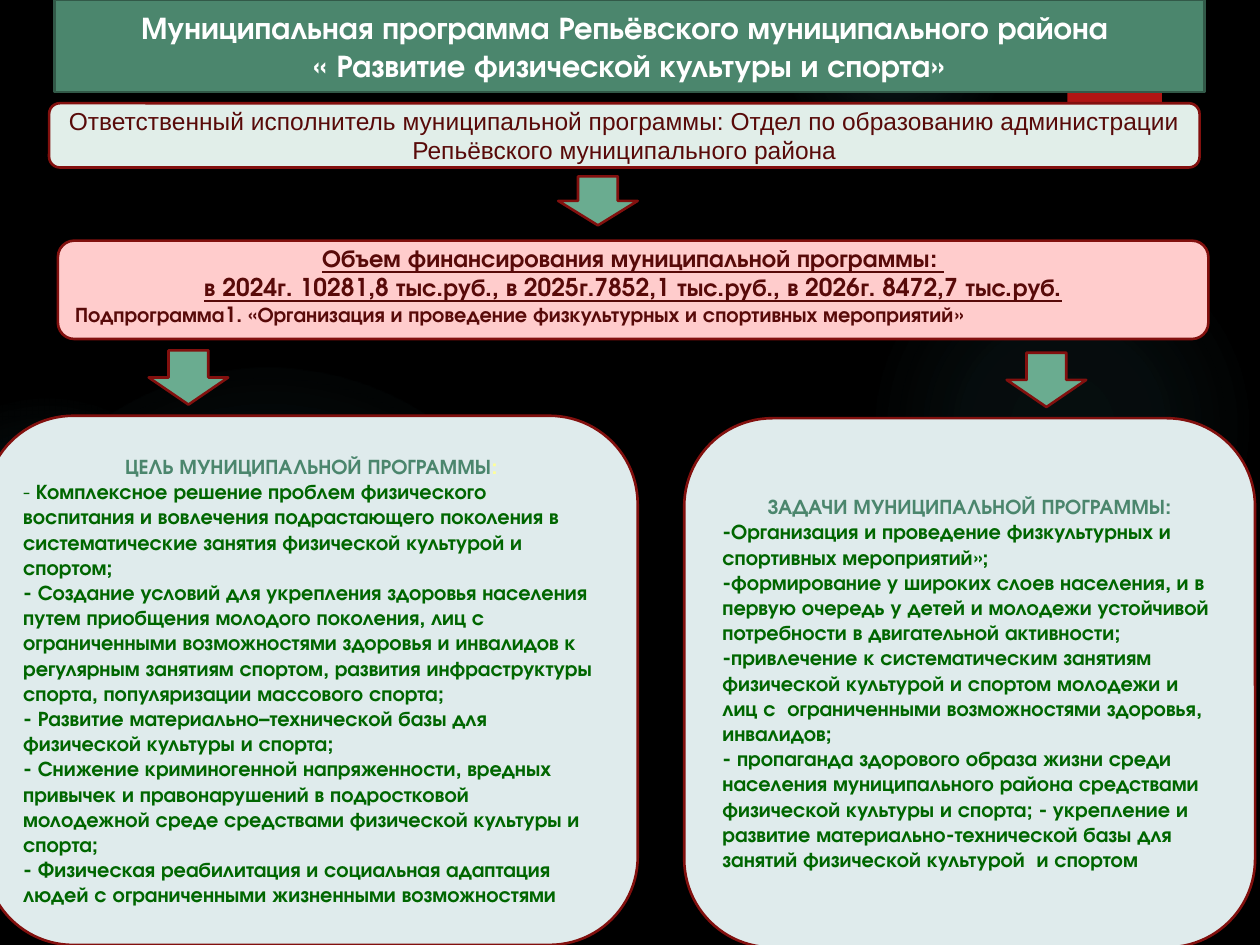
from lxml import etree
from pptx import Presentation
from pptx.dml.color import RGBColor
from pptx.enum.shapes import MSO_SHAPE
from pptx.enum.text import MSO_ANCHOR, MSO_AUTO_SIZE, PP_ALIGN
from pptx.oxml.ns import qn
from pptx.util import Pt

OVAL, RECT = MSO_SHAPE.OVAL, MSO_SHAPE.RECTANGLE
ROUND, ARROW = MSO_SHAPE.ROUNDED_RECTANGLE, MSO_SHAPE.DOWN_ARROW
MIDDLE, NO_FIT = MSO_ANCHOR.MIDDLE, MSO_AUTO_SIZE.NONE
LEFT, CENTER = PP_ALIGN.LEFT, PP_ALIGN.CENTER

BLACK = RGBColor(0x00, 0x00, 0x00)
WHITE = RGBColor(0xFF, 0xFF, 0xFF)
TEAL = "50B9C1"
RED = RGBColor(0xB0, 0x15, 0x13)
MAROON = RGBColor(0x82, 0x10, 0x0E)
WINE = RGBColor(0x58, 0x0A, 0x09)
GREEN = RGBColor(0x4B, 0x86, 0x6D)
PINE = RGBColor(0x32, 0x59, 0x48)
LEAF = RGBColor(0x00, 0x66, 0x00)
MINT = RGBColor(0x6A, 0xAC, 0x90)
PALE = RGBColor(0xE1, 0xEE, 0xE9)
PINK = RGBColor(0xFF, 0xCC, 0xCC)
MIST = RGBColor(0xDF, 0xEB, 0xEC)
CREAM = RGBColor(0xFF, 0xFF, 0x99)

SANS, GOTHIC = "Arial", "TeX Gyre Adventor"


def style(size, color, name=GOTHIC, bold=True, underline=False):
    return {"size": Pt(size), "color": color, "name": name,
            "bold": bold, "underline": underline}


HEAD = style(18, WHITE)
OWNER = style(14, WINE, SANS, False)
FUNDS = style(14, WINE, underline=True)
SUB = style(12, WINE)
CAP = style(12, GREEN)
COLON = style(12, CREAM)
ITEM = style(12, LEAF)
DASH = style(12, LEAF, bold=False)

# Each paragraph: alignment, then (text, style) runs
TITLE = [
    (CENTER, [("Муниципальная программа Репьёвского муниципального района ", HEAD)]),
    (CENTER, [("« Развитие физической культуры и спорта»", HEAD)]),
]
AGENCY = [
    (CENTER, [("Ответственный исполнитель муниципальной программы: Отдел по "
               "образованию администрации Репьёвского муниципального района", OWNER)]),
]
BUDGET = [
    (CENTER, [("Объем финансирования муниципальной программы: ", FUNDS)]),
    (CENTER, [("в 2024г. 10281,8 тыс.руб., в 2025г.7852,1 тыс.руб., "
               "в 2026г. 8472,7 тыс.руб.", FUNDS)]),
    (LEFT, [("Подпрограмма1. «Организация и проведение физкультурных "
             "и спортивных мероприятий»", SUB)]),
]
AIMS = [
    (CENTER, [("ЦЕЛЬ МУНИЦИПАЛЬНОЙ ПРОГРАММЫ", CAP), (":", COLON)]),
    (LEFT, [("- ", DASH),
            ("Комплексное решение проблем физического воспитания и вовлечения "
             "подрастающего поколения в систематические занятия физической "
             "культурой и спортом;", ITEM)]),
] + [(LEFT, [(text, ITEM)]) for text in (
    "- Создание условий для укрепления здоровья населения путем приобщения "
    "молодого поколения, лиц с ограниченными возможностями здоровья и инвалидов "
    "к регулярным занятиям спортом, развития инфраструктуры спорта, "
    "популяризации массового спорта;",
    "- Развитие материально–технической базы для физической культуры и спорта;",
    "- Снижение криминогенной напряженности, вредных привычек и правонарушений "
    "в подростковой молодежной среде средствами физической культуры и спорта;",
    "- Физическая реабилитация и социальная адаптация людей с ограниченными "
    "жизненными возможностями",
)]
TASKS = [
    (CENTER, [("ЗАДАЧИ МУНИЦИПАЛЬНОЙ ПРОГРАММЫ:", CAP)]),
] + [(LEFT, [(text, ITEM)]) for text in (
    "-Организация и проведение физкультурных и спортивных мероприятий»;",
    "-формирование у широких слоев населения, и в первую очередь у детей и "
    "молодежи устойчивой потребности в двигательной активности;",
    "-привлечение к систематическим занятиям физической культурой и спортом "
    "молодежи и лиц с  ограниченными возможностями здоровья, инвалидов;",
    "- пропаганда здорового образа жизни среди населения муниципального района "
    "средствами физической культуры и спорта; - укрепление и развитие "
    "материально-технической базы для занятий физической культурой  и спортом",
)]

# Left, top, diameter, then (position, opacity) stops in percent
GLOWS = [
    (496, 132, 222, [(0, 7), (36, 6), (69, 0)]),
    (448, -36, 126, [(0, 14), (36, 7), (73, 0)]),
    (496, 480, 78, [(0, 9), (36, 5), (66, 0)]),
    (-12, 210, 330, [(0, 11), (36, 10), (75, 0)]),
    (-66, 228, 186, [(0, 8), (36, 8), (72, 0)]),
]
WIDE, TALL = 657.4, 302.4
BOXES = [
    ((28.1, 59, WIDE, 36.7), PALE, AGENCY, (3.6, 3.6)),
    ((33.1, 137.5, WIDE, 56.2), PINK, BUDGET, (0, 6)),
    ((-8.6, 237.6, 373, TALL), MIST, AIMS, (3.6, 3.6)),
    ((391, 239, 326.2, TALL), MIST, TASKS, (3.6, 3.6)),
]
ARROWS = [(319, 100.8, 28), (85, 200.2, 31), (575.3, 201.6, 31)]


def paint(shape, fill, line=None):
    shape.fill.solid()
    shape.fill.fore_color.rgb = fill
    if line is None:
        shape.line.fill.background()
    else:
        shape.line.color.rgb = line
        shape.line.width = Pt(1.5)


def add(slide, kind, box, fill, line=None):
    shape = slide.shapes.add_shape(kind, *map(Pt, box))
    shape.shadow.inherit = False
    paint(shape, fill, line)
    return shape


def write(shape, paras, pads=(3.6, 3.6)):
    frame = shape.text_frame
    frame.word_wrap = True
    frame.auto_size = NO_FIT
    frame.vertical_anchor = MIDDLE
    frame.margin_top, frame.margin_bottom = map(Pt, pads)
    for i, (align, runs) in enumerate(paras):
        para = frame.add_paragraph() if i else frame.paragraphs[0]
        para.alignment = align
        for text, form in runs:
            run = para.add_run()
            run.text = text
            for key, value in form.items():
                if key == "color":
                    run.font.color.rgb = value
                else:
                    setattr(run.font, key, value)


def glow(shape, stops):
    """Swap the solid fill for a radial fade."""
    old = shape.element.spPr.find(qn("a:solidFill"))
    grad = etree.Element(qn("a:gradFill"), rotWithShape="1")
    items = etree.SubElement(grad, qn("a:gsLst"))
    for pos, alpha in stops:
        stop = etree.SubElement(items, qn("a:gs"), pos=str(pos * 1000))
        color = etree.SubElement(stop, qn("a:srgbClr"), val=TEAL)
        etree.SubElement(color, qn("a:alpha"), val=str(alpha * 1000))
    way = etree.SubElement(grad, qn("a:path"), path="circle")
    etree.SubElement(way, qn("a:fillToRect"),
                     dict.fromkeys("ltrb", "50000"))
    old.getparent().replace(old, grad)


def main():
    deck = Presentation()
    deck.slide_width, deck.slide_height = Pt(720), Pt(540)
    slide = deck.slides.add_slide(deck.slide_layouts[5])
    slide.background.fill.solid()
    slide.background.fill.fore_color.rgb = BLACK

    for left, top, size, stops in GLOWS:
        glow(add(slide, OVAL, (left, top, size, size), BLACK), stops)
    tab = add(slide, RECT, (610, 0, 54, 86.4), RED)

    title = slide.shapes.title
    title.left, title.top, title.width, title.height = map(Pt, (31, 0, WIDE, 52.6))
    paint(title, GREEN, PINE)
    write(title, TITLE)
    tab.element.addnext(title.element)

    for box, fill, paras, pads in BOXES:
        write(add(slide, ROUND, box, fill, MAROON), paras, pads)
    for left, top, high in ARROWS:
        add(slide, ARROW, (left, top, 45.4, high), MINT, MAROON)
    deck.save("out.pptx")


if __name__ == "__main__":
    main()
